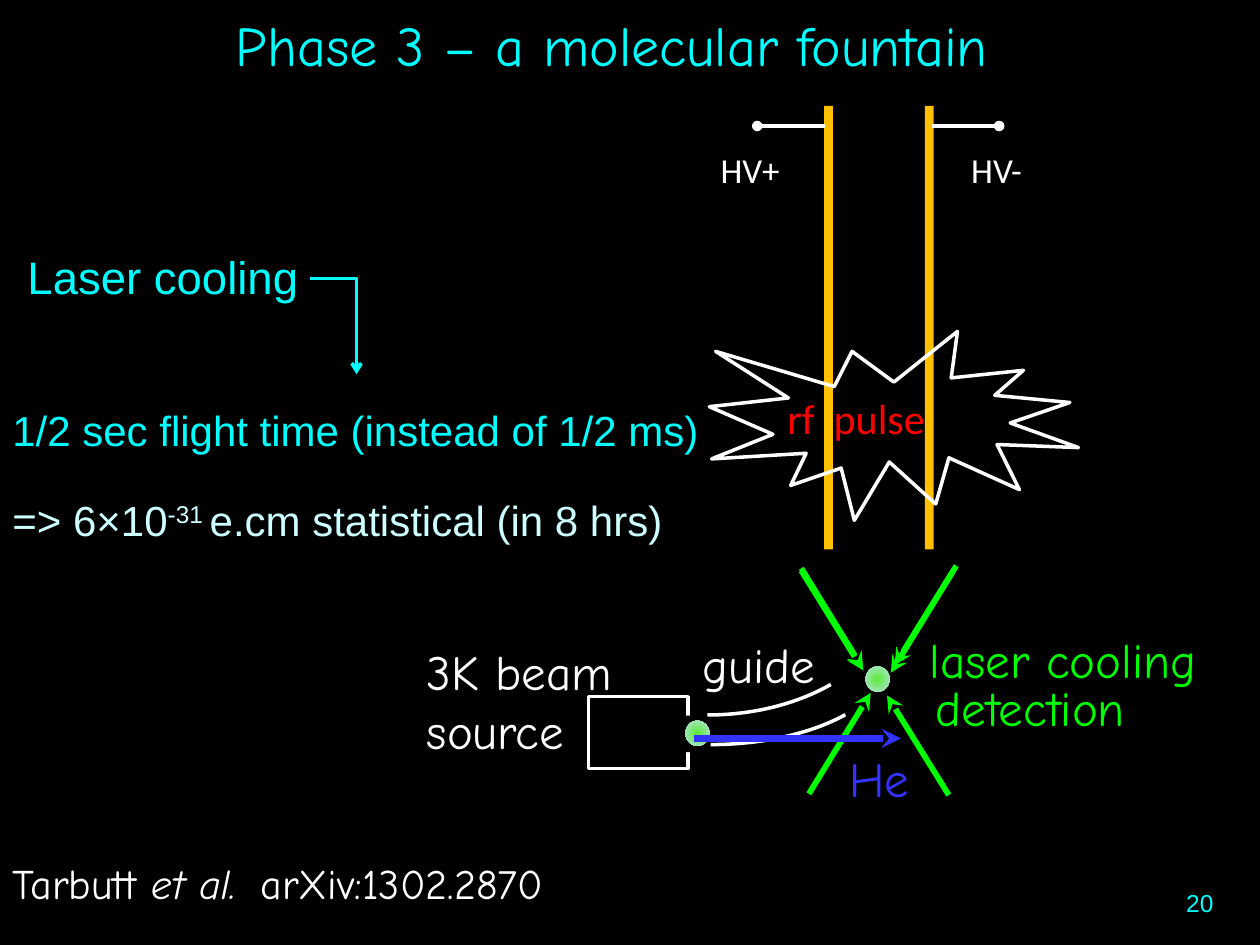
import dataclasses

import lxml.etree
import pptx
import pptx.dml.color
import pptx.enum.shapes
import pptx.enum.text
import pptx.oxml.ns
import pptx.util

Inches = pptx.util.Inches
Shape = pptx.enum.shapes.MSO_SHAPE
Anchor = pptx.enum.text.MSO_ANCHOR
Align = pptx.enum.text.PP_ALIGN
AutoSize = pptx.enum.text.MSO_AUTO_SIZE
qn = pptx.oxml.ns.qn


@dataclasses.dataclass(frozen=True)
class Theme:
    """Colours, fonts and type sizes of the slide."""
    black: str = "000000"
    white: str = "FFFFFF"
    cyan: str = "00FFFF"
    pale: str = "CCFFFF"
    gold: str = "FFC000"
    green: str = "00FF00"
    blue: str = "3333FF"
    red: str = "FF0000"
    cloud_core: str = "5CEB35"
    cloud_edge: str = "B8E3E6"
    hand: str = "Comic Neue"
    sans: str = "Arial"
    plain: str = "Calibri"
    title: int = 32
    label: int = 28
    heading: int = 26
    body: int = 24
    electrode: int = 20
    number: int = 14
    outline: float = 2
    beam: float = 3.25
    helium: float = 3.75


def rgb(colour):
    """Turn a hex string into a colour."""
    return pptx.dml.color.RGBColor.from_string(colour)


class SlideBuilder:
    """Draws styled elements on one slide."""

    def __init__(self, slide, theme):
        self.slide = slide
        self.theme = theme
        slide.background.fill.solid()
        slide.background.fill.fore_color.rgb = rgb(theme.black)

    def add_runs(self, paragraph, runs, font, size, colour):
        """Add (text, format) runs to a paragraph."""
        for text, look in runs:
            run = paragraph.add_run()
            run.text = text
            run.font.name = font
            run.font.size = pptx.util.Pt(size)
            run.font.color.rgb = rgb(colour)
            if "italic" in look:
                run.font.italic = look["italic"]
            for attribute in ("baseline", "spc"):
                if attribute in look:
                    run.font._element.set(attribute, str(look[attribute]))

    def title(self, box, text):
        """Fill and place the title placeholder."""
        heading = self.slide.shapes.title
        heading.left, heading.top, heading.width, heading.height = map(Inches, box)
        frame = heading.text_frame
        frame.auto_size = AutoSize.NONE
        frame.vertical_anchor = Anchor.MIDDLE
        frame.paragraphs[0].alignment = Align.CENTER
        self.add_runs(frame.paragraphs[0], [(text, {})], self.theme.hand,
                      self.theme.title, self.theme.cyan)

    def text(self, box, lines, font, size, colour, wrap=False, before=0,
             anchor=Anchor.TOP, align=Align.LEFT):
        """Add a text box; each line is a string or a list of runs."""
        frame = self.slide.shapes.add_textbox(*map(Inches, box)).text_frame
        frame.word_wrap = wrap
        frame.auto_size = AutoSize.NONE if wrap else AutoSize.SHAPE_TO_FIT_TEXT
        frame.vertical_anchor = anchor
        for index, line in enumerate(lines):
            paragraph = frame.add_paragraph() if index else frame.paragraphs[0]
            paragraph.alignment = align
            paragraph.space_before = pptx.util.Pt(before)
            runs = [(line, {})] if isinstance(line, str) else line
            self.add_runs(paragraph, runs, font, size, colour)

    def shape(self, kind, box, fill=None, line=None, rotation=0, adjustments=()):
        """Add a preset shape with a plain fill or outline."""
        shape = self.slide.shapes.add_shape(kind, *map(Inches, box))
        shape.shadow.inherit = False
        shape.rotation = rotation
        for index, value in enumerate(adjustments):
            shape.adjustments[index] = value
        if fill:
            shape.fill.solid()
            shape.fill.fore_color.rgb = rgb(fill)
        else:
            shape.fill.background()
        if line:
            shape.line.color.rgb = rgb(line)
            shape.line.width = pptx.util.Pt(self.theme.outline)
        else:
            shape.line.fill.background()
        return shape

    def cloud(self, left, top):
        """Add a molecule cloud with a radial gradient."""
        cloud = self.shape(Shape.OVAL, (left, top, 0.19, 0.2))
        cloud.fill.gradient()
        stops = cloud.fill.gradient_stops
        colours = (self.theme.cloud_core, self.theme.cloud_edge)
        for stop, colour, position in zip(stops, colours, (0, 1)):
            stop.color.rgb = rgb(colour)
            stop.position = position
        gradient = cloud._element.spPr.find(qn("a:gradFill"))
        linear = gradient.find(qn("a:lin"))
        radial = lxml.etree.Element(qn("a:path"), path="circle")
        lxml.etree.SubElement(radial, qn("a:fillToRect"),
                              l="50000", t="50000", r="50000", b="50000")
        gradient.replace(linear, radial)

    def line(self, start, end, colour, width, head=None):
        """Add a straight line, with an optional head at its end."""
        line = self.slide.shapes.add_connector(
            pptx.enum.shapes.MSO_CONNECTOR.STRAIGHT, *map(Inches, start + end))
        line.line.color.rgb = rgb(colour)
        line.line.width = pptx.util.Pt(width)
        if head:
            lxml.etree.SubElement(line.line._get_or_add_ln(), qn("a:tailEnd"), type=head)
        lxml.etree.SubElement(line._element.spPr, qn("a:effectLst"))


def main():
    """Build the molecular fountain slide."""
    deck = pptx.Presentation()
    deck.slide_width, deck.slide_height = Inches(10), Inches(7.5)
    theme = Theme()
    fountain = SlideBuilder(deck.slides.add_slide(deck.slide_layouts[5]), theme)
    fountain.title((-0.58, 0.02, 10.88, 0.66), "Phase 3 – a molecular fountain")

    for plate_left in (6.54, 7.34):
        fountain.shape(Shape.RECTANGLE, (plate_left, 0.84, 0.07, 3.52), theme.gold)

    fountain.shape(Shape.RECTANGLE, (4.67, 5.53, 0.79, 0.57), line=theme.white)
    fountain.shape(Shape.RECTANGLE, (5.44, 5.68, 0.09, 0.29), theme.black)
    fountain.text((3.29, 5.04, 1.76, 1.04), ["3K beam", "source"],
                  theme.hand, theme.label, theme.white)
    for cloud_corner in ((5.44, 5.72), (6.87, 5.29)):
        fountain.cloud(*cloud_corner)

    fountain.text((0, 3.16, 6.14, 0.74), ["1/2 sec flight time (instead of 1/2 ms)"],
                  theme.sans, theme.body, theme.cyan, wrap=True, before=4.8)
    fountain.text((0.12, 1.93, 6.14, 0.74), ["Laser cooling"],
                  theme.sans, theme.heading, theme.cyan, wrap=True, before=5.2)
    elbow = (2.83, 2.21)
    fountain.line(elbow, (2.83, 2.97), theme.cyan, theme.outline, "arrow")
    fountain.line(elbow, (2.46, 2.21), theme.cyan, theme.outline)
    sensitivity = [("=> 6×10", {}), ("-31 ", {"baseline": 30000}),
                   ("e.cm statistical (in 8 hrs)", {})]
    fountain.text((0, 3.73, 5.65, 0.79), [sensitivity], theme.sans, theme.body,
                  theme.pale, wrap=True, anchor=Anchor.MIDDLE)

    for guide_box, guide_start in (((4.92, 3.75, 1.44, 2.88), 176.58),
                                   ((4.6, 3.15, 2.03, 3.02), 184.98)):
        fountain.shape(Shape.ARC, guide_box, line=theme.white, rotation=90,
                       adjustments=(guide_start, 0))

    laser_beams = (
        ((6.36, 4.53), (6.85, 5.32)), ((7.56, 4.54), (7.07, 5.34)),
        ((6.42, 6.3), (6.91, 5.5)), ((7.53, 6.31), (7.04, 5.52)),
        ((6.36, 4.51), (6.85, 5.31)), ((7.59, 4.49), (7.1, 5.28)))
    for source, target in laser_beams:
        fountain.line(source, target, theme.green, theme.beam, "stealth")
    for label, box, colour in (
            ("laser cooling", (7.28, 4.95, 2.47, 0.57), theme.green),
            ("detection", (7.33, 5.33, 1.96, 0.57), theme.green),
            ("guide", (5.48, 4.99, 1.17, 0.57), theme.white)):
        fountain.text(box, [label], theme.hand, theme.label, colour)

    for label, plate_x, terminal_x, left, width in (
            ("HV+", 6.55, 6.01, 5.62, 0.68), ("HV-", 7.4, 7.93, 7.61, 0.62)):
        fountain.line((plate_x, 1), (terminal_x, 1), theme.white, theme.outline, "oval")
        fountain.text((left, 1.13, width, 0.44), [label],
                      theme.plain, theme.electrode, theme.white)

    fountain.line((5.51, 5.86), (7.15, 5.86), theme.blue, theme.helium, "stealth")
    fountain.text((6.64, 5.89, 0.72, 0.57), ["He"], theme.hand, theme.label, theme.blue)

    fountain.text((6.15, 3.07, 1.91, 0.5), [[("rf", {}), (" ", {"spc": 540}), ("pulse", {})]],
                  theme.plain, theme.body, theme.red, wrap=True)
    fountain.shape(Shape.EXPLOSION1, (5.63, 2.63, 2.93, 1.5), line=theme.white)

    fountain.text((7.65, 7, 2.08, 0.5), ["20"], theme.sans, theme.number,
                  theme.cyan, wrap=True, align=Align.RIGHT)
    citation = [("Tarbutt ", {}), ("et al.", {"italic": True}),
                (" ", {"spc": 600}), ("arXiv:1302.2870", {})]
    fountain.text((0, 6.76, 5.16, 0.5), [citation], theme.hand, theme.body, theme.white)
    deck.save("out.pptx")


if __name__ == "__main__":
    main()
